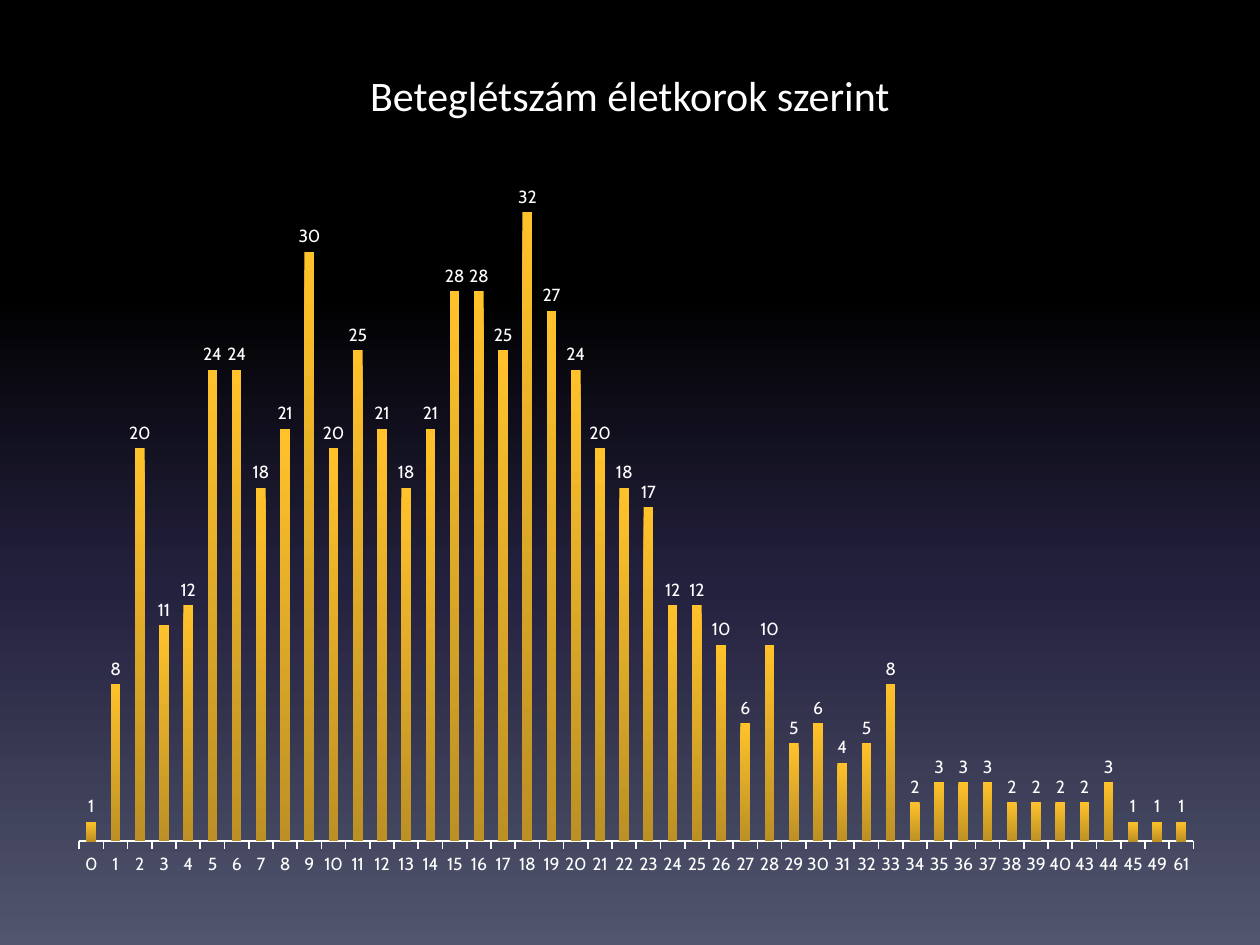
import copy

import pptx
import pptx.chart.data
import pptx.dml.color
import pptx.enum.chart
import pptx.enum.text
import pptx.oxml
import pptx.oxml.ns
import pptx.util

RGB = pptx.dml.color.RGBColor
WHITE = RGB(0xFF, 0xFF, 0xFF)
BLACK = RGB(0x00, 0x00, 0x00)
NIGHT = RGB(0x24, 0x21, 0x3E)
SLATE = RGB(0x51, 0x56, 0x6D)
GOLD = RGB(0xFF, 0xC2, 0x2B)
OCHRE = RGB(0xBC, 0x90, 0x24)

AGES = [*range(41), 43, 44, 45, 49, 61]
COUNTS = [
    1, 8, 20, 11, 12, 24, 24, 18, 21, 30, 20, 25, 21, 18, 21, 28,
    28, 25, 32, 27, 24, 20, 18, 17, 12, 12, 10, 6, 10, 5, 6, 4,
    5, 8, 2, 3, 3, 3, 2, 2, 2, 2, 3, 1, 1, 1,
]


def px(count):
    return pptx.util.Emu(round(count * 914400 / 126))


def shade(fill, root, stops):
    """Fill from top to bottom; root is the XML that holds the fill."""
    fill.gradient()
    fill.gradient_angle = 270
    marks = root.find(".//" + pptx.oxml.ns.qn("a:gsLst"))
    while len(marks) < len(stops):
        marks.append(copy.deepcopy(marks[0]))
    for mark, (place, color) in zip(fill.gradient_stops, stops):
        mark.position = place
        mark.color.rgb = color


def style(font, name, size):
    font.name = name
    font.size = pptx.util.Pt(size)
    font.color.rgb = WHITE


def add_title(slide, text):
    title = slide.shapes.title
    title.left, title.top, title.width, title.height = map(px, (63, 63, 1134, 158))
    frame = title.text_frame
    frame.text = text
    frame.vertical_anchor = pptx.enum.text.MSO_ANCHOR.TOP
    line = frame.paragraphs[0]
    line.alignment = pptx.enum.text.PP_ALIGN.CENTER
    style(line.runs[0].font, "Calibri", 24)


def place_plot(chart, x, y, w, h):
    """Fix the inner plot area, in shares of the chart."""
    area = chart.plots[0]._element.getparent()
    for old in area.findall(pptx.oxml.ns.qn("c:layout")):
        area.remove(old)
    sizes = "".join(
        f'<c:{tag} val="{val}"/>' for tag, val in zip("xywh", (x, y, w, h))
    )
    area.insert(0, pptx.oxml.parse_xml(
        f'<c:layout {pptx.oxml.ns.nsdecls("c")}><c:manualLayout>'
        '<c:layoutTarget val="inner"/><c:xMode val="edge"/><c:yMode val="edge"/>'
        f'{sizes}</c:manualLayout></c:layout>'
    ))


def style_axes(chart):
    kinds = pptx.enum.chart
    ages = chart.category_axis
    ages.major_tick_mark = kinds.XL_TICK_MARK.OUTSIDE
    ages.has_major_gridlines = False
    ages.format.line.color.rgb = WHITE
    ages.format.line.width = pptx.util.Pt(1)
    counts = chart.value_axis
    counts.minimum_scale = 0
    counts.maximum_scale = 35
    counts.has_major_gridlines = False
    counts.visible = False


def add_bars(slide):
    kinds = pptx.enum.chart
    data = pptx.chart.data.CategoryChartData()
    data.categories = [str(age) for age in AGES]
    data.add_series("Series 1", COUNTS)
    chart = slide.shapes.add_chart(
        kinds.XL_CHART_TYPE.COLUMN_CLUSTERED, *map(px, (44, 146, 1173, 756)), data
    ).chart
    chart.has_title = False
    chart.has_legend = False
    style(chart.font, "Cabin", 10)
    style_axes(chart)
    place_plot(chart, 0.03, 0.01, 0.95, 0.91)

    plot = chart.plots[0]
    plot.gap_width = 150
    plot.vary_by_categories = False
    bars = plot.series[0]
    shade(bars.format.fill, bars._element, [(0, GOLD), (1, OCHRE)])
    labels = bars.data_labels
    labels.show_value = True
    labels.position = kinds.XL_LABEL_POSITION.OUTSIDE_END
    style(labels.font, "Cabin", 10)


def main():
    deck = pptx.Presentation()
    deck.slide_width, deck.slide_height = px(1260), px(945)
    slide = deck.slides.add_slide(deck.slide_layouts[5])
    night = [(0, BLACK), (0.31, BLACK), (0.62, NIGHT), (1, SLATE)]
    shade(slide.background.fill, slide.element, night)
    add_title(slide, "Beteglétszám életkorok szerint")
    add_bars(slide)
    deck.save("out.pptx")


if __name__ == "__main__":
    main()
